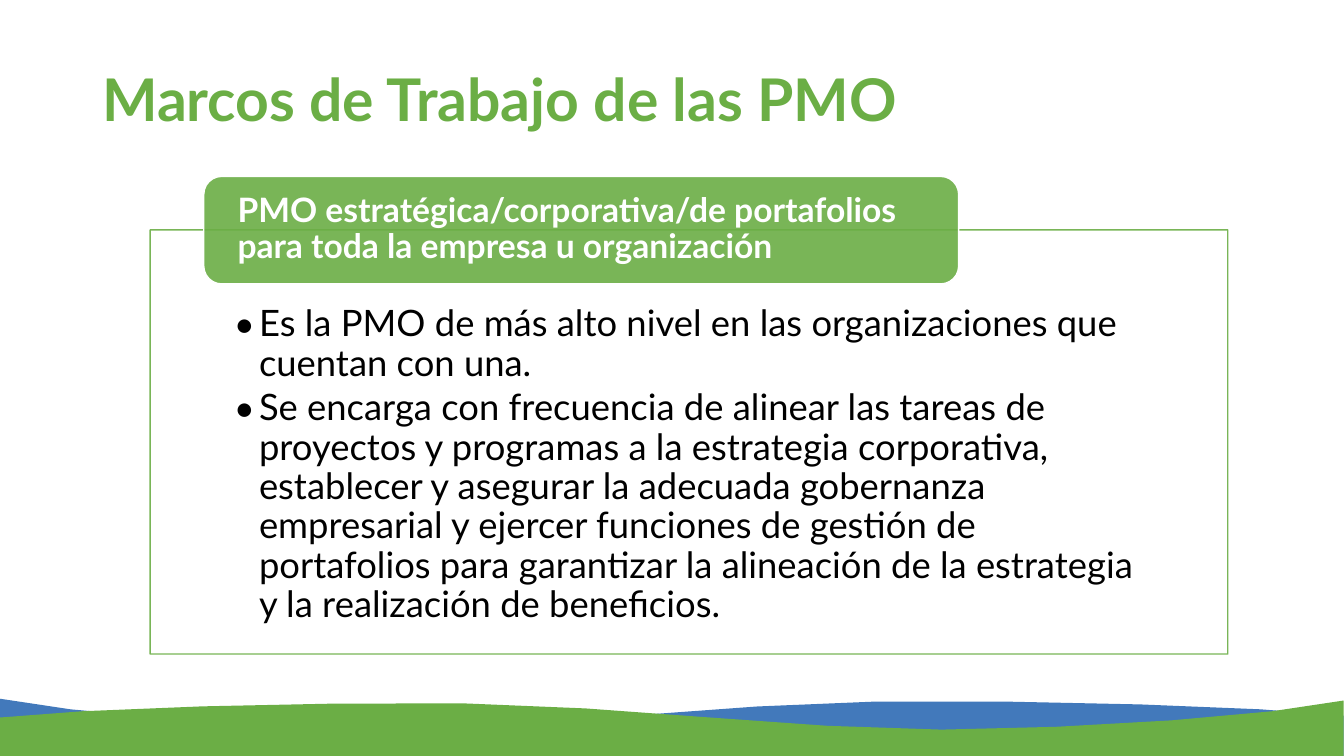
"""Build the slide on the frameworks of a PMO."""
from dataclasses import dataclass

from lxml.etree import SubElement
from pptx import Presentation
from pptx.dml.color import RGBColor
from pptx.enum.shapes import MSO_SHAPE
from pptx.enum.text import MSO_ANCHOR, PP_ALIGN
from pptx.oxml.ns import qn
from pptx.util import Pt


@dataclass(frozen=True)
class Theme:
    """Colours, font and type sizes of the slide."""
    green: str = "6BAE45"
    blue: str = "4279BB"
    white: str = "FFFFFF"
    black: str = "000000"
    font: str = "Lato"
    title: int = 42
    label: int = 24
    body: int = 26


THEME = Theme()
WIDE, HIGH = 960, 540
PANEL = (107.2, 164.2, 769.8, 303)
TITLE = "Marcos de Trabajo de las PMO"
LABEL = "PMO estratégica/corporativa/de portafolios para toda la empresa u organización"
POINTS = [
    "Es la PMO de más alto nivel en las organizaciones que cuentan con una.",
    "Se encarga con frecuencia de alinear las tareas de proyectos y programas "
    "a la estrategia corporativa, establecer y asegurar la adecuada gobernanza "
    "empresarial y ejercer funciones de gestión de portafolios para garantizar "
    "la alineación de la estrategia y la realización de beneficios.",
]
CREST = [(959.8, 511.2), (904.3, 504.7), (738.7, 499.7), (626.4, 501.1),
         (514.8, 502.6), (391, 519.8), (286.6, 519.8),
         (182.2, 519.1), (49, 509.8), (-0.7, 499)]
BASE = [(-0.7, 539.3), (959.8, 540)]


def curve(knots, steps=4):
    """Return points along a chain of cubic Bézier curves."""
    dots = [knots[0]]
    for i in range(0, len(knots) - 1, 3):
        for k in range(1, steps + 1):
            t = k / steps
            parts = ((1 - t) ** 3, 3 * t * (1 - t) ** 2, 3 * t * t * (1 - t), t ** 3)
            dots.append(tuple(sum(w * p[axis] for w, p in zip(parts, knots[i:i + 4]))
                              for axis in (0, 1)))
    return dots


def paint(shape, fill, line=None, alpha=None, line_alpha=None):
    """Set the fill and line of a shape, with optional opacity in percent."""
    shape.shadow.inherit = False
    shape.fill.solid()
    shape.fill.fore_color.rgb = RGBColor.from_string(fill)
    if line:
        shape.line.color.rgb = RGBColor.from_string(line)
        shape.line.width = Pt(1)
    else:
        shape.line.fill.background()
    props = shape.fill._xPr
    for node, value in ((props, alpha), (props.find(qn("a:ln")), line_alpha)):
        if value:
            color = node.find(qn("a:solidFill"))[0]
            SubElement(color, qn("a:alpha"), val=str(value * 1000))


def add_wave(slide, dots, color):
    """Draw a filled wave through the given points."""
    spots = [(Pt(x), Pt(y)) for x, y in dots]
    form = slide.shapes.build_freeform(*spots[0], scale=1.0)
    form.add_line_segments(spots[1:], close=True)
    paint(form.convert_to_shape(), color)


def add_block(slide, kind, box, fill, line, alpha, line_alpha=None):
    """Add a preset shape with a fill and a thin line."""
    shape = slide.shapes.add_shape(kind, *map(Pt, box))
    paint(shape, fill, line, alpha, line_alpha)


def add_text(slide, box, lines, size, color, insets, bold=False,
             anchor=MSO_ANCHOR.MIDDLE, after=0, bullet=False):
    """Add a text box with formatted paragraphs."""
    frame = slide.shapes.add_textbox(*map(Pt, box)).text_frame
    frame.word_wrap = True
    frame.vertical_anchor = anchor
    (frame.margin_left, frame.margin_top,
     frame.margin_right, frame.margin_bottom) = map(Pt, insets)
    frame.text = "\n".join(lines)
    for para in frame.paragraphs:
        para.alignment = PP_ALIGN.LEFT
        para.line_spacing = 0.9
        para.space_after = Pt(after)
        if bullet:
            add_bullet(para)
        for run in para.runs:
            run.font.name = THEME.font
            run.font.size = Pt(size)
            run.font.bold = bold
            run.font.color.rgb = RGBColor.from_string(color)


def add_bullet(para):
    """Give a paragraph a round bullet with a hanging indent."""
    props = para._p.get_or_add_pPr()
    para.level = 1
    props.set("marL", str(Pt(18)))
    props.set("indent", str(Pt(-18)))
    SubElement(props, qn("a:buFont"), typeface=THEME.font)
    SubElement(props, qn("a:buChar"), char="•")


def main():
    """Build and save the slide."""
    deck = Presentation()
    deck.slide_width, deck.slide_height = Pt(WIDE), Pt(HIGH)
    slide = deck.slides.add_slide(deck.slide_layouts[6])

    wave = curve(CREST) + BASE
    add_wave(slide, wave, THEME.blue)
    add_wave(slide, [(WIDE - 0.9 - x, y + 1.4) for x, y in wave], THEME.green)

    add_text(slide, (66, 20.8, 828, 104.4), [TITLE], THEME.title, THEME.green,
             (7.2, 3.6, 7.2, 3.6), bold=True)

    add_block(slide, MSO_SHAPE.RECTANGLE, PANEL, THEME.white, THEME.green, 90, 90)
    add_text(slide, PANEL, POINTS, THEME.body, THEME.black, (59.8, 54, 59.8, 14.4),
             anchor=MSO_ANCHOR.TOP, after=3.9, bullet=True)

    add_block(slide, MSO_SHAPE.ROUNDED_RECTANGLE, (145.6, 126, 539.2, 76.8),
              THEME.green, THEME.white, 90)
    add_text(slide, (149.5, 129.6, 531.4, 69.2), [LABEL], THEME.label, THEME.white,
             (20.2, 0, 20.2, 0), bold=True)

    deck.save("out.pptx")


if __name__ == "__main__":
    main()
